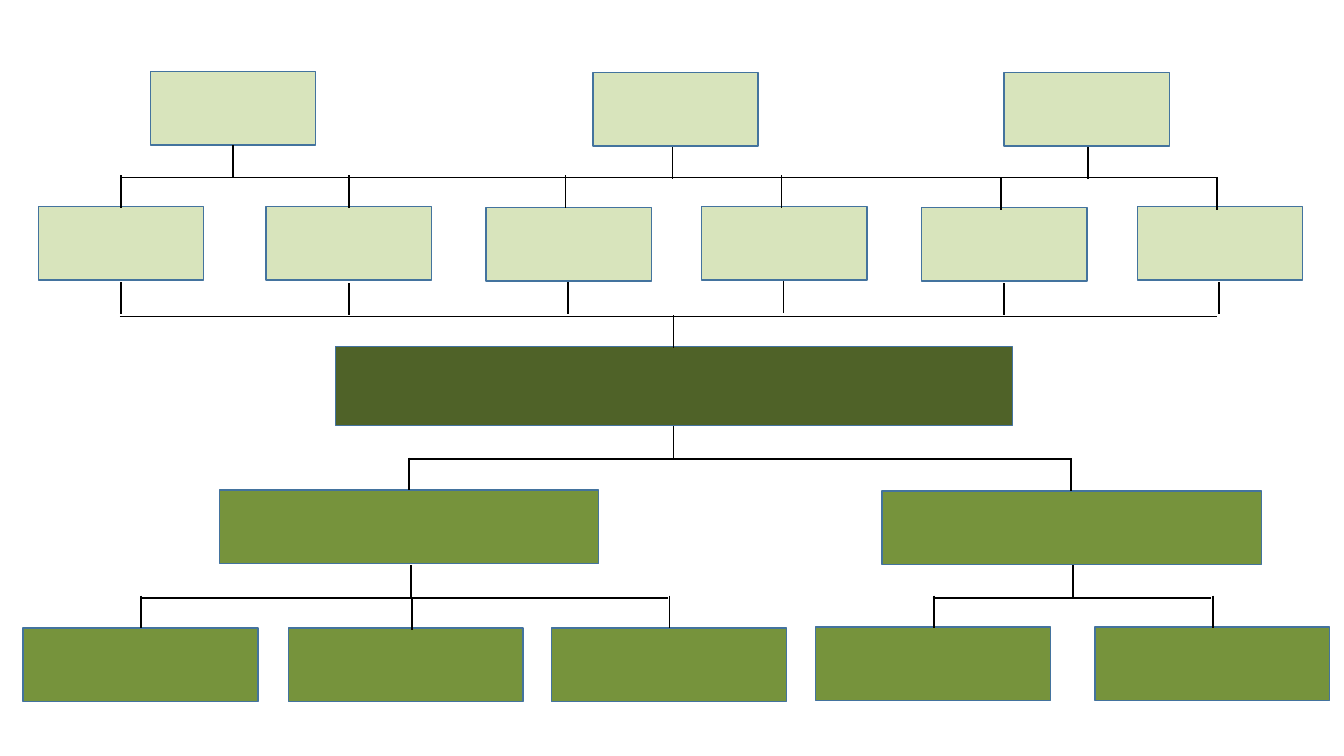
from lxml import etree
from pptx import Presentation
from pptx.dml.color import RGBColor
from pptx.enum.shapes import MSO_CONNECTOR as CONN, MSO_SHAPE as SHAPE
from pptx.oxml.ns import qn
from pptx.util import Emu, Pt

PX = 9144  # 100 px to the inch
STUB = 32
COLORS = {
    "light": "D8E4BC",
    "mid": "76933C",
    "dark": "4F6228",
    "border": "43739E",
    "link": "000000",
}


def px(n):
    return Emu(n * PX)


def color(name):
    return RGBColor.from_string(COLORS[name])


class Chart:
    """Style and current slide of the hierarchy chart."""

    def __init__(self, prs):
        self.s = prs.slides.add_slide(prs.slide_layouts[6])
        self.border_width = Pt(1)
        self.link_width = Pt(1.25)

    def box(self, x, y, w, h, fill):
        sp = self.s.shapes.add_shape(SHAPE.RECTANGLE, px(x), px(y), px(w), px(h))
        sp.shadow.inherit = False
        sp.fill.solid()
        sp.fill.fore_color.rgb = color(fill)
        sp.line.color.rgb = color("border")
        sp.line.width = self.border_width

    def row(self, places, w, h, fill):
        for x, y in places:
            self.box(x, y, w, h, fill)

    def line(self, x1, y1, x2, y2):
        c = self.s.shapes.add_connector(CONN.STRAIGHT, px(x1), px(y1), px(x2), px(y2))
        c.line.color.rgb = color("link")
        c.line.width = self.link_width
        etree.SubElement(c._element.spPr, qn("a:effectLst"))

    def bar(self, x1, x2, y):
        self.line(x1, y, x2, y)

    def stubs(self, places):
        for x, y in places:
            self.line(x, y, x, y + STUB)


def main():
    prs = Presentation()
    prs.slide_width, prs.slide_height = px(1333), px(750)
    chart = Chart(prs)

    # Boxes, from the top level down
    chart.row([(149, 71), (588, 72), (996, 72)], 164, 73, "light")
    chart.row([(38, 205), (264, 205), (482, 206),
               (696, 205), (914, 206), (1128, 205)], 164, 73, "light")
    chart.box(333, 344, 671, 78, "dark")
    chart.row([(218, 486), (875, 487)], 376, 73, "mid")
    chart.row([(23, 623), (286, 623), (547, 623),
               (809, 622), (1086, 622)], 233, 73, "mid")

    # Top level to second level
    chart.stubs([(231, 144), (667, 146), (1079, 146)])
    chart.bar(120, 1208, 176)
    chart.stubs([(120, 174), (346, 174), (561, 174),
                 (775, 174), (993, 176), (1207, 176)])

    # Second level to the central box
    chart.stubs([(120, 280), (346, 281), (563, 280),
                 (777, 279), (996, 281), (1209, 280)])
    chart.bar(119, 1207, 314)
    chart.stubs([(668, 313)])

    # Central box to the two branches
    chart.stubs([(668, 423)])
    chart.bar(406, 1063, 455)
    chart.stubs([(406, 454), (1062, 455)])

    # Branches to the bottom level
    chart.stubs([(408, 561), (1064, 561)])
    chart.bar(139, 663, 593)
    chart.bar(925, 1201, 593)
    chart.stubs([(140, 591), (409, 593), (664, 591), (926, 591), (1203, 591)])

    prs.save("out.pptx")


if __name__ == "__main__":
    main()
